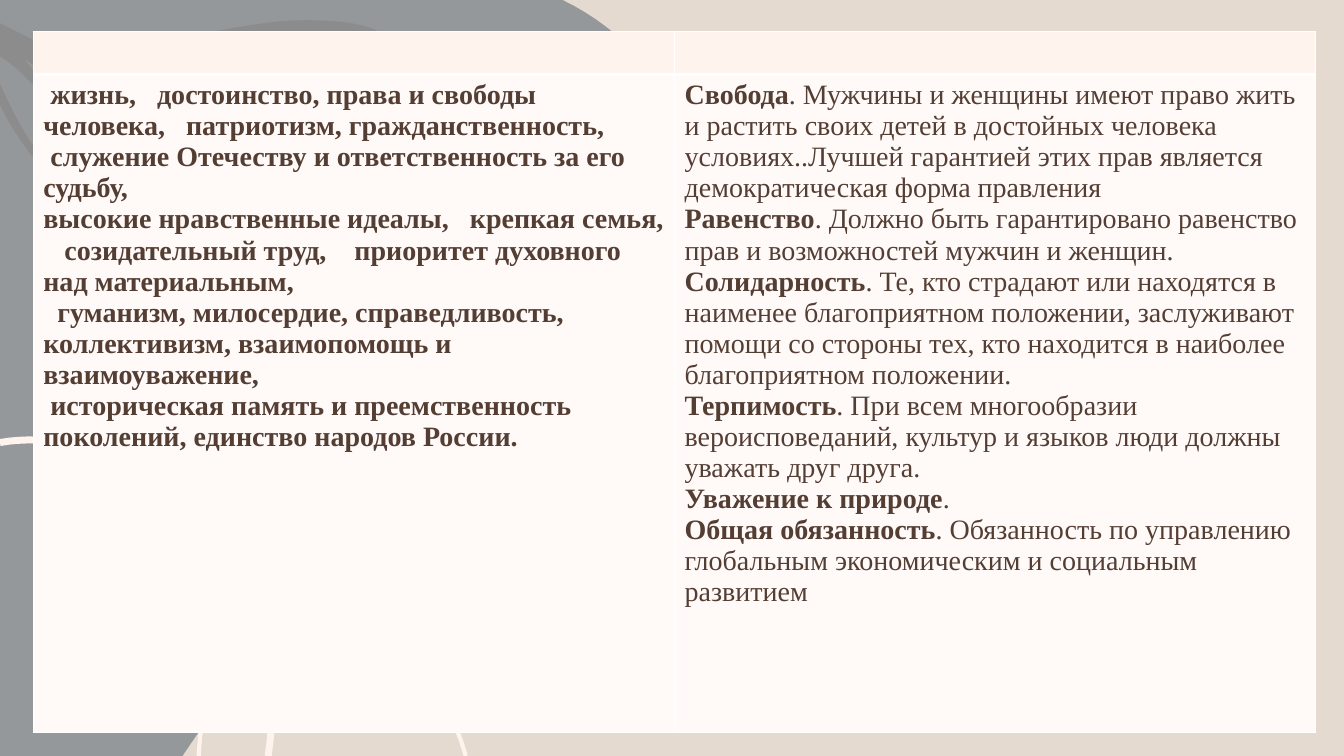
from lxml.etree import SubElement
from pptx import Presentation
from pptx.dml.color import RGBColor
from pptx.oxml.ns import qn
from pptx.util import Inches, Pt

WIDTH, HEIGHT = 13.33, 7.5
SAND, SLATE, BROWN = "E5DACF", "5D6A76", "543E34"
BLUSH, CREAM, WHITE = "FEF3ED", "FFFAF8", "FFFFFF"
UNITS = 1000  # drawing units per inch
STEPS = 16  # straight pieces per curve


def paint(target, colour, opacity=100):
    """Give a fill a solid colour, see-through below 100 percent."""
    target.solid()
    target.fore_color.rgb = RGBColor.from_string(colour)
    if opacity < 100:
        alpha = SubElement(target._xPr.find(".//" + qn("a:srgbClr")), qn("a:alpha"))
        alpha.set("val", str(opacity * 1000))


def draw_outline(start, segments, closed):
    """Draw lines (2 numbers) and cubic curves (6 numbers) as one freeform."""
    points = [start]
    for segment in segments:
        if len(segment) == 2:
            points.append(segment)
            continue
        x0, y0 = points[-1]
        x1, y1, x2, y2, x3, y3 = segment
        for step in range(1, STEPS + 1):
            t = step / STEPS
            a, b, c, d = (1 - t) ** 3, 3 * t * (1 - t) ** 2, 3 * t * t * (1 - t), t ** 3
            points.append((a * x0 + b * x1 + c * x2 + d * x3,
                           a * y0 + b * y1 + c * y2 + d * y3))
    scaled = [(x * UNITS, y * UNITS) for x, y in points]
    builder = slide.shapes.build_freeform(*scaled[0], scale=Inches(1) / UNITS)
    builder.add_line_segments(scaled[1:], close=closed)
    shape = builder.convert_to_shape()
    shape.shadow.inherit = False
    return shape


prs = Presentation()
prs.slide_width, prs.slide_height = Inches(WIDTH), Inches(HEIGHT)
slide = prs.slides.add_slide(prs.slide_layouts[6])
paint(slide.background.fill, SAND)

# Soft blob and the leafy branch on it
blob = [
    (5.58, 0), (6.2, 0.3, 6.6, 0.8, 6.87, 1.39), (7.17, 2.03, 7.25, 2.73, 7.05, 3.48),
    (6.82, 4.37, 6.28, 5.1, 4.7, 5.47), (3.4, 5.7, 2.6, 6.3, 1.81, HEIGHT), (0, HEIGHT),
]
branch = [
    (3.4, 0.2, 3.8, 0.25, 3.82, 0.4), (3.8, 0.6, 3.2, 0.95, 2.56, 1.08),
    (3.5, 1.6, 4.8, 1.0, 5.7, 1.23), (6.2, 1.6, 4.8, 2.2, 3.22, 1.43),
    (4.2, 2.1, 3.8, 2.2, 3.46, 2.28), (3.8, 2.6, 4.1, 3.2, 3.9, 3.48),
    (2.6, 2.6, 2.8, 1.9, 1.49, 1.07), (0.46, 0.59),
    (1.0, 1.2, 1.9, 2.5, 1.28, 2.3), (0.8, 2.2, 0.21, 1.5, 0, 1.04),
    (0, 0.83), (0.2, 1.3, 0.7, 2.2, 1.36, 2.22),
    (1.2, 1.5, 0.7, 0.9, 0.24, 0.58), (0.39, 0.79, 0.9, 1.4, 1.11, 1.86),
    (0.8, 1.5, 0.4, 0.8, 0, 0.56), (0, 0.23), (0.5, 0.48),
    (1.7, 0.5, 2.3, 0.2, 3.03, 0.2),
]
for start, segments, colour, opacity in (((0, 0), blob, SLATE, 59),
                                         ((3.03, 0.2), branch, BROWN, 13)):
    patch = draw_outline(start, segments, True)
    paint(patch.fill, colour, opacity)
    patch.line.fill.background()

# Pale arcs at the bottom left
small_arc = [(2.02, 6.5, 2.4, 6.12, 3, 6.12), (3.8, 6.15, 4.4, 6.7, 4.62, HEIGHT)]
large_arc = [(0.5, 4.3, 1, 4.46, 1.35, 4.64), (2.41, 5.19, 2.81, 6.56, 2.66, HEIGHT)]
for start, segments, weight in (((1.97, HEIGHT), small_arc, 3), ((0, 4.39), large_arc, 5)):
    arc = draw_outline(start, segments, False)
    arc.fill.background()
    paint(arc.line.fill, BLUSH)
    arc.line.width = Pt(weight)

# Each paragraph is a bold part and a plain part
russian_values = [
    (" жизнь,   достоинство, права и свободы человека,   патриотизм, гражданственность,", ""),
    (" служение Отечеству и ответственность за его судьбу,", ""),
    ("высокие нравственные идеалы,   крепкая семья,    созидательный труд,    "
     "приоритет духовного над материальным,", ""),
    ("  гуманизм, милосердие, справедливость, коллективизм, взаимопомощь и взаимоуважение,", ""),
    (" историческая память и преемственность поколений, единство народов России.", ""),
]
world_values = [
    ("Свобода", ". Мужчины и женщины имеют право жить и растить своих детей в достойных "
     "человека условиях..Лучшей гарантией этих прав является демократическая форма правления"),
    ("Равенство", ". Должно быть гарантировано равенство прав и возможностей мужчин и женщин."),
    ("Солидарность", ". Те, кто страдают или находятся в наименее благоприятном положении, "
     "заслуживают помощи со стороны тех, кто находится в наиболее благоприятном положении."),
    ("Терпимость", ". При всем многообразии вероисповеданий, культур и языков люди должны "
     "уважать друг друга."),
    ("Уважение к природе", "."),
    ("Общая обязанность", ". Обязанность по управлению глобальным экономическим и "
     "социальным развитием"),
]
rows = [([], []), (russian_values, world_values)]
row_heights, column_width = (0.43, 6.53), 6.36

values = slide.shapes.add_table(2, 2, Inches(0.33), Inches(0.31),
                                Inches(2 * column_width), Inches(sum(row_heights))).table
for column in values.columns:
    column.width = Inches(column_width)

for r, (height, row) in enumerate(zip(row_heights, rows)):
    values.rows[r].height = Inches(height)
    divider = "B" if r == 0 else "T"
    for c, paragraphs in enumerate(row):
        cell = values.cell(r, c)
        properties = cell._tc.get_or_add_tcPr()
        for side in "LRTB":
            weight = Pt(3 if side == divider else 1)
            border = SubElement(properties, qn("a:ln" + side), w=str(weight))
            SubElement(SubElement(border, qn("a:solidFill")), qn("a:srgbClr"), val=WHITE)
        paint(cell.fill, BLUSH if r == 0 else CREAM)

        for i, parts in enumerate(paragraphs):
            frame = cell.text_frame
            paragraph = frame.paragraphs[0] if i == 0 else frame.add_paragraph()
            for text, bold in zip(parts, (True, False)):
                if text:
                    run = paragraph.add_run()
                    run.text = text
                    run.font.name, run.font.size = "Times New Roman", Pt(20)
                    run.font.bold = bold
                    paint(run.font.fill, BROWN)

prs.save("out.pptx")
